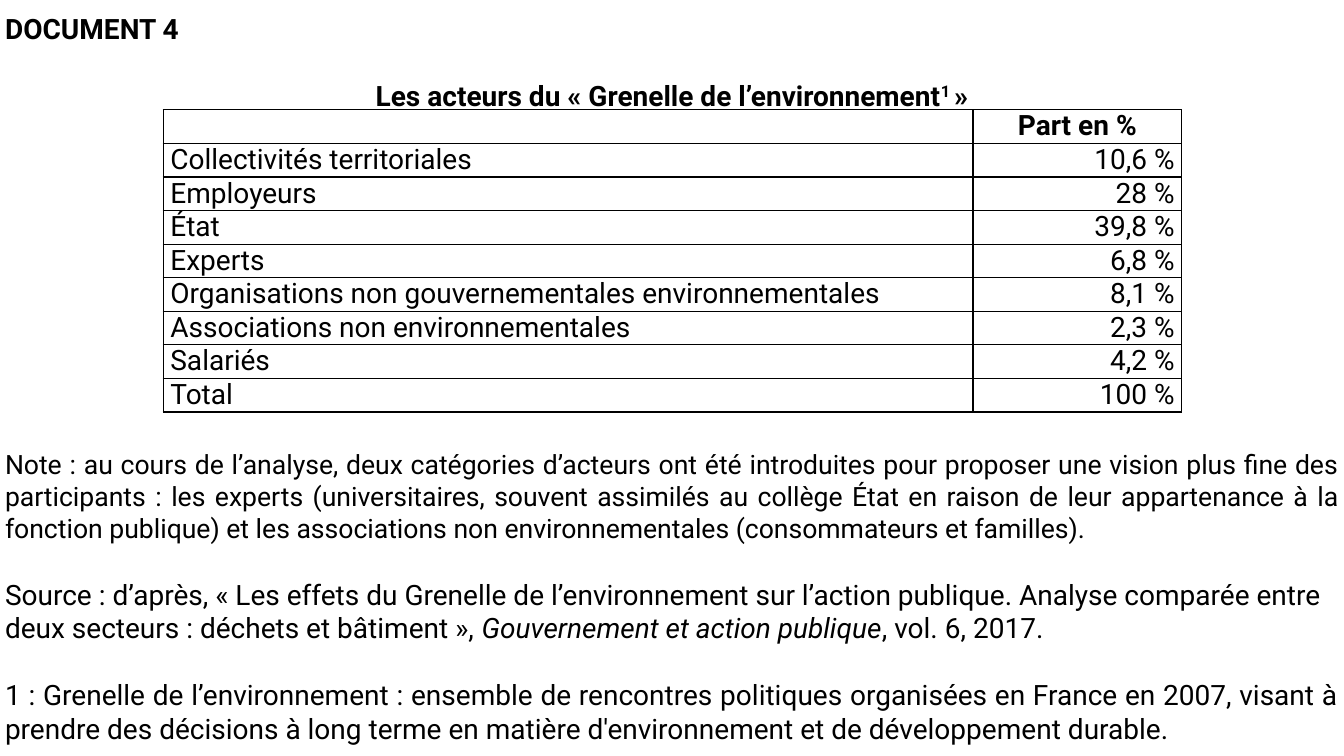
"""Build the slide on the actors of the Grenelle de l’environnement."""
from lxml import etree
from pptx import Presentation
from pptx.dml.color import RGBColor
from pptx.enum import text
from pptx.oxml import ns
from pptx.util import Inches, Pt

COLOURS = {"ink": "000000", "page": "FFFFFF"}
FONT = "Roboto"
LINE = 1 / 3
ALIGN = text.PP_ALIGN


def write(para, spans, align, size=20):
    """Fill a paragraph with (wording, styles) spans."""
    para.alignment = align
    for wording, styles in spans:
        span = para.add_run()
        span.text = wording
        span.font.name = FONT
        span.font.size = Pt(size)
        span.font.bold = "bold" in styles
        span.font.italic = "italic" in styles
        span.font.color.rgb = RGBColor.from_string(COLOURS["ink"])
        if "super" in styles:
            span.font._element.set("baseline", "32000")


def place(box, line, lines):
    """Put a full-width text box at a line of the page grid."""
    box.left, box.top = Inches(0), Inches(0.06 + line * LINE)
    box.width, box.height = Inches(13.33), Inches(0.1 + lines * LINE)
    frame = box.text_frame
    frame.word_wrap = True
    frame.auto_size = text.MSO_AUTO_SIZE.NONE
    frame.vertical_anchor = text.MSO_ANCHOR.TOP
    frame.margin_left = frame.margin_right = Inches(0.05)
    frame.margin_top = frame.margin_bottom = Inches(0.05)
    return frame


deck = Presentation()
deck.slide_width, deck.slide_height = Inches(13.33), Inches(7.5)
page = deck.slides.add_slide(deck.slide_layouts[5])
page.background.fill.solid()
page.background.fill.fore_color.rgb = RGBColor.from_string(COLOURS["page"])

heading = place(page.shapes.title, 0, 1)
write(heading.paragraphs[0], [("DOCUMENT 4", "bold")], ALIGN.LEFT)

caption = place(page.shapes.add_textbox(0, 0, 0, 0), 2, 1)
write(caption.paragraphs[0], [
    ("Les acteurs du « Grenelle de l’environnement", "bold"),
    ("1 ", "bold super"),
    ("»", "bold"),
], ALIGN.CENTER)

rows = [
    ("", "Part en %"),
    ("Collectivités territoriales", "10,6 %"),
    ("Employeurs", "28 %"),
    ("État", "39,8 %"),
    ("Experts", "6,8 %"),
    ("Organisations non gouvernementales environnementales", "8,1 %"),
    ("Associations non environnementales", "2,3 %"),
    ("Salariés", "4,2 %"),
    ("Total", "100 %"),
]
table = page.shapes.add_table(len(rows), 2, Inches(1.62), Inches(1.09),
                              Inches(10.1), Inches(len(rows) * LINE)).table
table.first_row = table.horz_banding = False
table.columns[0].width, table.columns[1].width = Inches(8.03), Inches(2.07)
for r, row in enumerate(rows):
    for c, wording in enumerate(row):
        cell = table.cell(r, c)
        cell.margin_left = cell.margin_right = Inches(0.07)
        cell.margin_top = cell.margin_bottom = 0
        if wording:
            align = ALIGN.CENTER if r == 0 else (ALIGN.LEFT, ALIGN.RIGHT)[c]
            write(cell.text_frame.paragraphs[0],
                  [(wording, "bold" if r == 0 else "")], align)
        properties = cell._tc.get_or_add_tcPr()
        for side in ("a:lnL", "a:lnR", "a:lnT", "a:lnB"):
            border = etree.SubElement(properties, ns.qn(side), w=str(Pt(1)))
            fill = etree.SubElement(border, ns.qn("a:solidFill"))
            etree.SubElement(fill, ns.qn("a:srgbClr"), val=COLOURS["ink"])
        cell.fill.background()

notes = [
    ([("Note : au cours de l’analyse, deux catégories d’acteurs ont été "
       "introduites pour proposer une vision plus fine des participants : les "
       "experts (universitaires, souvent assimilés au collège État en raison "
       "de leur appartenance à la fonction publique) et les associations non "
       "environnementales (consommateurs et familles).", "")],
     ALIGN.JUSTIFY, 19),
    ([("Source : d’après, « Les effets du Grenelle de l’environnement sur "
       "l’action publique. Analyse comparée entre deux secteurs : déchets et "
       "bâtiment », ", ""),
      ("Gouvernement et action publique", "italic"),
      (", vol. 6, 2017.", "")],
     ALIGN.LEFT, 20),
    ([("1 : Grenelle de l’environnement : ensemble de rencontres politiques "
       "organisées en France en 2007, visant à prendre des décisions à long "
       "terme en matière d'environnement et de développement durable.", "")],
     ALIGN.JUSTIFY, 20),
]
footer = place(page.shapes.add_textbox(0, 0, 0, 0), 13, 9)
for i, (spans, align, size) in enumerate(notes):
    para = footer.add_paragraph() if i else footer.paragraphs[0]
    para.space_before = Pt(24 if i else 0)
    write(para, spans, align, size)

deck.save("out.pptx")
